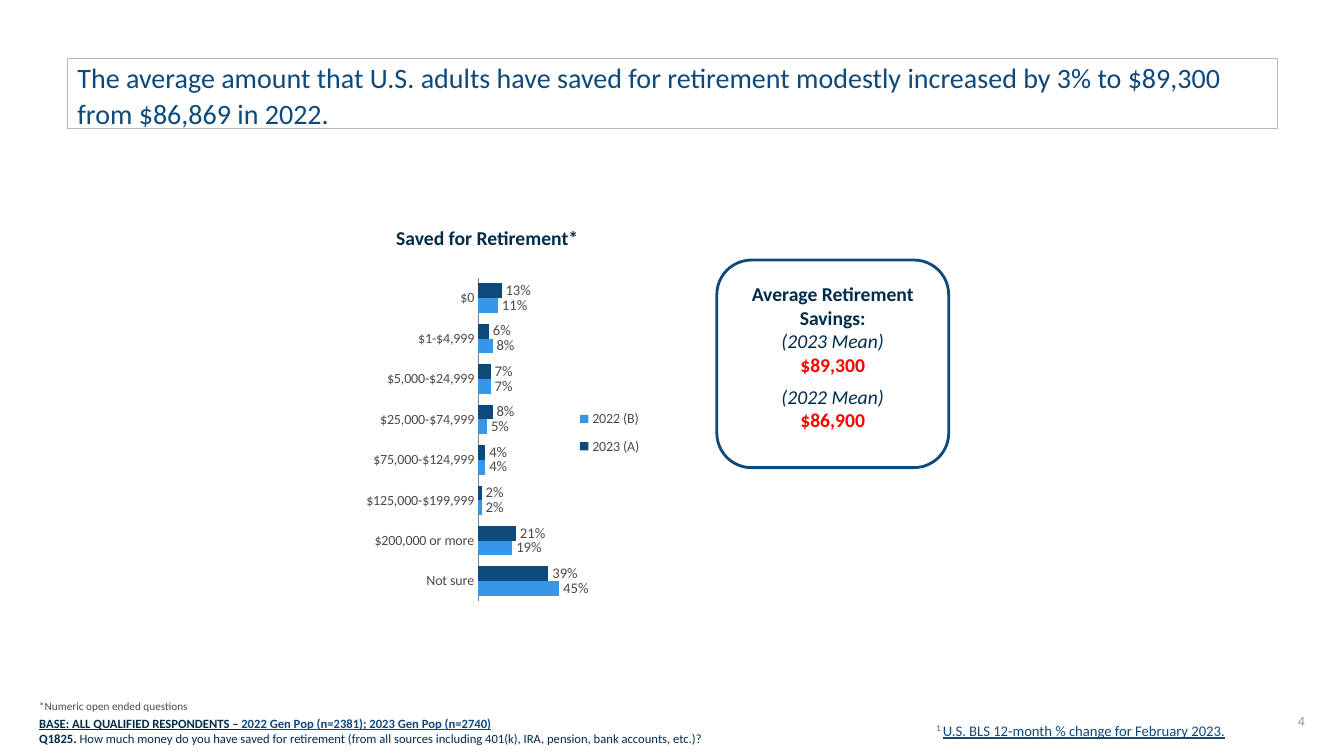
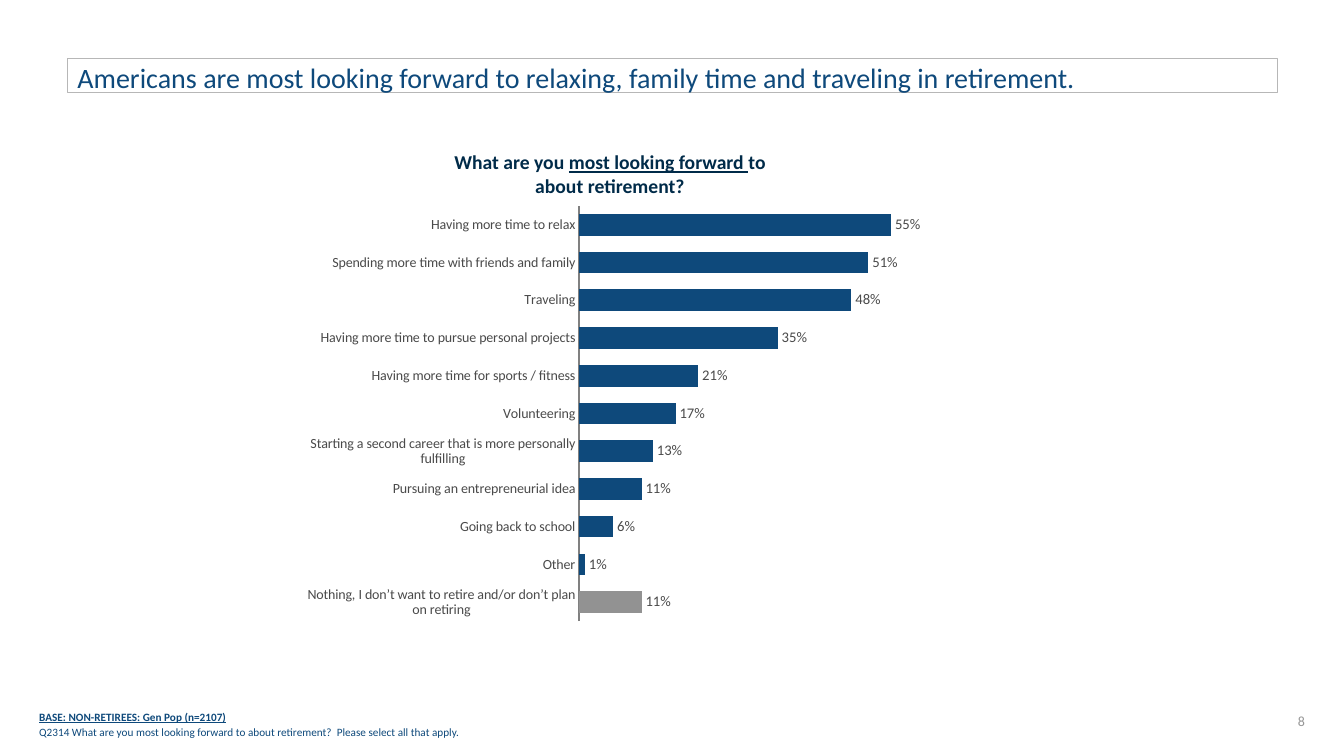
import pptx
import pptx.chart.data
import pptx.dml.color
import pptx.enum.chart
import pptx.enum.shapes
import pptx.enum.text
import pptx.oxml
import pptx.util

Inches = pptx.util.Inches
Pt = pptx.util.Pt
color = pptx.dml.color.RGBColor.from_string
align = pptx.enum.text.PP_ALIGN
anchors = pptx.enum.text.MSO_ANCHOR
shapes = pptx.enum.shapes.MSO_SHAPE

FONT = "Calibri"
BLUE, NAVY, SKY = "0E497B", "002B49", "3696E8"
RED, TEXT_GRAY, BAR_GRAY = "FF0000", "4A4A4A", "929292"
NUMBER_GRAY, BORDER_GRAY, AXIS_GRAY = "969696", "B7B7B7", "808080"
BOLD = {"bold": True}
ITALIC = {"italic": True}
UNDERLINED = {"underline": True}
BOLD_UNDERLINED = {"bold": True, "underline": True}


def write_text(frame, lines, size, text_color, alignment=align.LEFT, anchor=anchors.TOP, spacing=None):
    frame.word_wrap = True
    frame.vertical_anchor = anchor
    for index, runs in enumerate(lines):
        paragraph = frame.paragraphs[0] if index == 0 else frame.add_paragraph()
        paragraph.alignment = alignment
        paragraph.line_spacing = spacing
        paragraph.font.name = FONT
        paragraph.font.size = Pt(size)
        paragraph.font.color.rgb = color(text_color)
        for text, style in runs:
            run = paragraph.add_run()
            run.text = text
            for name, value in style.items():
                if name == "color":
                    run.font.color.rgb = color(value)
                else:
                    setattr(run.font, name, value)


def add_bar_chart(slide, box, categories, series, maximum, plot_layout, axis_width):
    chart_data = pptx.chart.data.CategoryChartData(number_format="0%")
    chart_data.categories = categories
    for name, values, _ in series:
        chart_data.add_series(name, values)
    chart = slide.shapes.add_chart(
        pptx.enum.chart.XL_CHART_TYPE.BAR_CLUSTERED, *map(Inches, box), chart_data
    ).chart
    chart.has_title = False
    chart.has_legend = False
    chart.font.name = FONT
    chart.font.size = Pt(10)
    chart.font.color.rgb = color(TEXT_GRAY)

    category_axis = chart.category_axis
    category_axis.reverse_order = True
    category_axis.major_tick_mark = pptx.enum.chart.XL_TICK_MARK.NONE
    category_axis.format.line.color.rgb = color(AXIS_GRAY)
    category_axis.format.line.width = Pt(axis_width)
    value_axis = chart.value_axis
    value_axis.minimum_scale = 0
    value_axis.maximum_scale = maximum
    value_axis.has_major_gridlines = False
    value_axis.visible = False

    plot = chart.plots[0]
    plot.gap_width = 75
    plot.overlap = 0
    plot.vary_by_categories = False
    for bars, (_, _, bar_color) in zip(plot.series, series):
        bars.format.fill.solid()
        bars.format.fill.fore_color.rgb = color(bar_color)
        labels = bars.data_labels
        labels.show_value = True
        labels.number_format = "0%"
        labels.number_format_is_linked = False
        labels.position = pptx.enum.chart.XL_LABEL_POSITION.OUTSIDE_END
        labels.font.name = FONT
        labels.font.size = Pt(10.5)
        labels.font.color.rgb = color(TEXT_GRAY)

    plot_area = chart.element.xpath("c:chart/c:plotArea")[0]
    for layout in plot_area.xpath("c:layout"):
        plot_area.remove(layout)
    x, y, width, height = plot_layout
    plot_area.insert(0, pptx.oxml.parse_xml(
        '<c:layout xmlns:c="http://schemas.openxmlformats.org/drawingml/2006/chart"><c:manualLayout>'
        '<c:layoutTarget val="inner"/><c:xMode val="edge"/><c:yMode val="edge"/>'
        f'<c:x val="{x}"/><c:y val="{y}"/><c:w val="{width}"/><c:h val="{height}"/>'
        '</c:manualLayout></c:layout>'
    ))
    return chart


presentation = pptx.Presentation()
presentation.slide_width = Inches(13.33)
presentation.slide_height = Inches(7.5)

headers = [
    ("The average amount that U.S. adults have saved for retirement modestly increased by 3% to $89,300 "
     "from $86,869 in 2022.", 0.7, "4"),
    ("Americans are most looking forward to relaxing, family time and traveling in retirement.", 0.34, "8"),
]
slides = []
for title, title_height, number in headers:
    slide = presentation.slides.add_slide(presentation.slide_layouts[6])
    slides.append(slide)
    title_box = slide.shapes.add_shape(
        shapes.RECTANGLE, Inches(0.67), Inches(0.58), Inches(12), Inches(title_height)
    )
    title_box.shadow.inherit = False
    title_box.fill.background()
    title_box.line.color.rgb = color(BORDER_GRAY)
    title_box.line.width = Pt(0.75)
    title_box.text_frame.margin_top = title_box.text_frame.margin_bottom = 0
    write_text(title_box.text_frame, [[(title, {})]], 20, BLUE, spacing=1.07)
    number_box = slide.shapes.add_textbox(Inches(10.04), Inches(6.95), Inches(3), Inches(0.4))
    write_text(number_box.text_frame, [[(number, {})]], 10, NUMBER_GRAY, align.RIGHT, anchors.MIDDLE)

savings_slide, plans_slide = slides

savings_chart = add_bar_chart(
    savings_slide,
    (2.28, 2.62, 4.83, 3.45),
    ["$0", "$1-$4,999", "$5,000-$24,999", "$25,000-$74,999", "$75,000-$124,999",
     "$125,000-$199,999", "$200,000 or more", "Not sure"],
    [
        ("2023 (A)", [0.13, 0.06, 0.07, 0.08, 0.04, 0.02, 0.21, 0.39], BLUE),
        ("2022 (B)", [0.11, 0.08, 0.07, 0.05, 0.04, 0.02, 0.19, 0.45], SKY),
    ],
    1,
    (0.51, 0.04, 0.37, 0.93),
    0.75,
)
savings_chart.has_legend = True
legend = savings_chart.legend
legend.position = pptx.enum.chart.XL_LEGEND_POSITION.RIGHT
legend.include_in_layout = False
legend_element = savings_chart.element.xpath("c:chart/c:legend")[0]
for layout in legend_element.xpath("c:layout"):
    legend_element.remove(layout)
legend_element.xpath("c:overlay")[0].addprevious(pptx.oxml.parse_xml(
    '<c:layout xmlns:c="http://schemas.openxmlformats.org/drawingml/2006/chart"><c:manualLayout>'
    '<c:xMode val="edge"/><c:yMode val="edge"/><c:x val="0.7"/><c:y val="0.39"/>'
    '<c:w val="0.16"/><c:h val="0.19"/></c:manualLayout></c:layout>'
))

plans_chart = add_bar_chart(
    plans_slide,
    (3.02, 1.91, 6.25, 4.43),
    ["Having more time to relax", "Spending more time with friends and family", "Traveling",
     "Having more time to pursue personal projects", "Having more time for sports / fitness",
     "Volunteering", "Starting a second career that is more personally fulfilling",
     "Pursuing an entrepreneurial idea", "Going back to school", "Other",
     "Nothing, I don’t want to retire and/or don’t plan on retiring"],
    [("Series 1", [0.55, 0.51, 0.48, 0.35, 0.21, 0.17, 0.13, 0.11, 0.06, 0.01, 0.11], BLUE)],
    0.6,
    (0.436, 0.03, 0.54, 0.93),
    1.5,
)
no_plans_bar = plans_chart.plots[0].series[0].points[10]
no_plans_bar.format.fill.solid()
no_plans_bar.format.fill.fore_color.rgb = color(BAR_GRAY)

savings_card = savings_slide.shapes.add_shape(
    shapes.ROUNDED_RECTANGLE, Inches(7.11), Inches(2.58), Inches(2.3), Inches(2.06)
)
savings_card.shadow.inherit = False
savings_card.fill.background()
savings_card.line.color.rgb = color(BLUE)
savings_card.line.width = Pt(2)
savings_card.text_frame.margin_top = Inches(0.12)
amount_style = {"bold": True, "color": RED}
write_text(savings_card.text_frame, [
    [("Average Retirement Savings:", BOLD)],
    [("(2023 Mean)", ITALIC)],
    [("$89,300", amount_style)],
    [("(2022 Mean)", ITALIC)],
    [("$86,900", amount_style)],
], 14, NAVY, align.CENTER)
savings_card.text_frame.paragraphs[2].space_after = Pt(6)

text_boxes = [
    (savings_slide, (3.83, 2.19, 2.28, 0.34), [[("Saved for Retirement*", BOLD)]],
     14, NAVY, align.LEFT, anchors.TOP, None),
    (savings_slide, (0.29, 6.9, 2, 0.22), [[("*Numeric open ended questions", {})]],
     8, TEXT_GRAY, align.LEFT, anchors.TOP, 0.9),
    (savings_slide, (0.29, 7.05, 8.42, 0.4), [
        [("BASE: ALL QUALIFIED RESPONDENTS – ", BOLD_UNDERLINED),
         ("2022 Gen Pop (n=2381); 2023 Gen Pop (n=2740)", {**BOLD_UNDERLINED, "color": BLUE})],
        [("Q1825. ", BOLD),
         ("How much money do you have saved for retirement (from all sources including 401(k), IRA, "
          "pension, bank accounts, etc.)?", {})],
    ], 9, NAVY, align.LEFT, anchors.BOTTOM, None),
    (savings_slide, (9.19, 7.13, 3.13, 0.26), [
        [("1 ", {"color": TEXT_GRAY}), ("U.S. BLS 12-month % change for February 2023.", UNDERLINED)],
    ], 10.5, BLUE, align.LEFT, anchors.TOP, 0.9),
    (plans_slide, (4.16, 1.44, 3.78, 0.57), [
        [("What are you ", BOLD), ("most looking forward ", BOLD_UNDERLINED),
         ("to about retirement?", BOLD)],
    ], 14, NAVY, align.CENTER, anchors.TOP, None),
    (plans_slide, (0.29, 6.98, 10.74, 0.4), [
        [("BASE: NON-RETIREES: Gen Pop (n=2107)", BOLD_UNDERLINED)],
        [("Q2314 What are you most looking forward to about retirement?  Please select all that apply.", {})],
    ], 8, BLUE, align.LEFT, anchors.BOTTOM, 1.15),
]
for slide, box, lines, size, text_color, alignment, anchor, spacing in text_boxes:
    text_box = slide.shapes.add_textbox(*map(Inches, box))
    write_text(text_box.text_frame, lines, size, text_color, alignment, anchor, spacing)
    first_run = text_box.text_frame.paragraphs[0].runs[0]
    if first_run.text == "1 ":
        first_run.font._element.set("baseline", "30000")

presentation.save("out.pptx")
